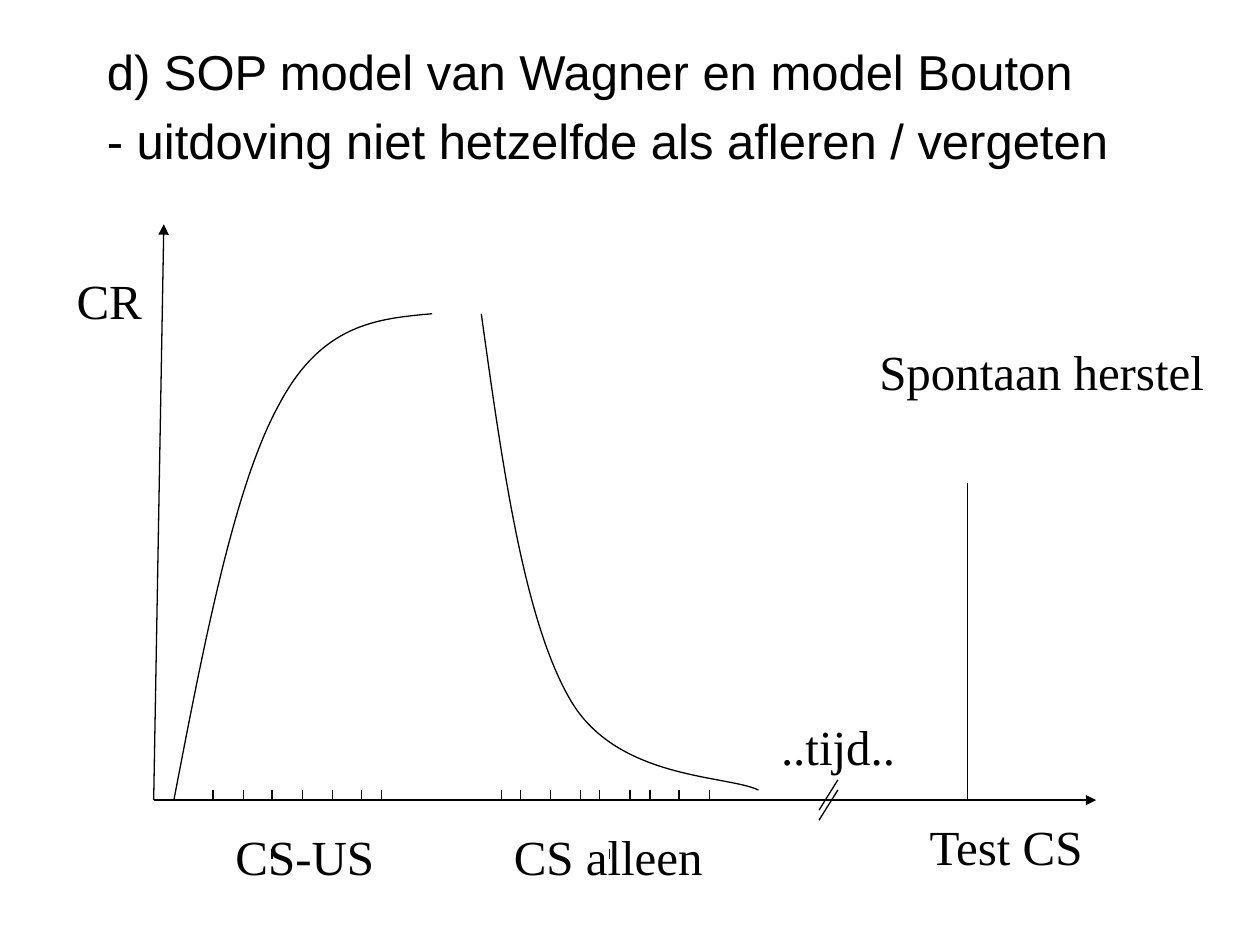
from lxml import etree
from pptx import Presentation
from pptx.dml.color import RGBColor
from pptx.enum.shapes import MSO_CONNECTOR as CONNECTOR
from pptx.oxml.ns import qn
from pptx.util import Inches, Pt

COLORS = {"ink": "000000", "background": "FFFFFF"}
INK = RGBColor.from_string(COLORS["ink"])
LINE_WIDTH = Pt(0.75)
TICK_HEIGHT = 0.08

HEADING = ["d) SOP model van Wagner en model Bouton",
           "- uitdoving niet hetzelfde als afleren / vergeten"]

# All plot coordinates are inches right of and above the origin of the axes.
ACQUISITION = [(0.16, 0), (0.4, 1.25), (0.64, 2.49), (0.99, 3.13),
               (1.33, 3.78), (1.77, 3.82), (2.21, 3.86)]
EXTINCTION = [(2.6, 3.86), (2.77, 2.64), (2.94, 1.42), (3.31, 0.79),
              (3.68, 0.16), (4.55, 0.2), (4.8, 0.08)]
TRIALS = [0.47, 0.71, 0.94, 1.18, 1.42, 1.65, 1.81,
          2.76, 2.91, 3.15, 3.39, 3.54, 3.78, 3.94, 4.17, 4.41]
TICKS = [(x, 0) for x in TRIALS] + [(0.94, -0.47), (3.62, -0.47)]
LABELS = [("CR", -0.71, 4.25, 0.72),
          ("CS-US", 0.55, -0.16, 1.31),
          ("CS alleen", 2.76, -0.16, 1.7),
          ("Test CS", 6.06, -0.08, 1.44),
          ("..tijd..", 4.88, 0.71, 1.11),
          ("Spontaan herstel", 5.66, 3.69, 2.78)]


def add_text(slide, lines, box, font_name, wrap):
    frame = slide.shapes.add_textbox(*map(Inches, box)).text_frame
    frame.word_wrap = wrap
    for index, line in enumerate(lines):
        paragraph = frame.paragraphs[0] if index == 0 else frame.add_paragraph()
        run = paragraph.add_run()
        run.text = line
        for name, value in {"name": font_name, "size": Pt(28)}.items():
            setattr(run.font, name, value)
        run.font.color.rgb = INK
    return frame


def ink_line(shape):
    shape.line.color.rgb = INK
    shape.line.width = LINE_WIDTH


def add_line(slide, start, end, arrow=False):
    line = slide.shapes.add_connector(
        CONNECTOR.STRAIGHT, *map(Inches, start + end))
    ink_line(line)
    properties = line._element.spPr
    if arrow:
        outline = properties.find(qn("a:ln"))
        etree.SubElement(outline, qn("a:tailEnd"), type="triangle")
    etree.SubElement(properties, qn("a:effectLst"))


def add_curve(slide, points):
    """Draw a Bezier path: a start, then two controls and an end per segment."""
    emu = [tuple(map(Inches, point)) for point in points]
    builder = slide.shapes.build_freeform(*emu[0])
    builder.add_line_segments(emu[1:], close=False)
    curve = builder.convert_to_shape()
    curve.fill.background()
    curve.shadow.inherit = False
    ink_line(curve)
    outline = next(curve._element.iter(qn("a:path")))
    corners = outline.findall(qn("a:lnTo"))
    for first in range(0, len(corners), 3):
        bezier = etree.SubElement(outline, qn("a:cubicBezTo"))
        for corner in corners[first:first + 3]:
            bezier.append(corner[0])
            outline.remove(corner)


def add_heading(slide, box):
    frame = add_text(slide, HEADING, box, "Arial", True)
    for paragraph in frame.paragraphs:
        indent = paragraph._p.get_or_add_pPr()
        indent.set("marL", str(Inches(0.38)))
        indent.set("indent", str(-Inches(0.38)))
    frame.paragraphs[1].space_before = Pt(5.6)


def add_conditioning_plot(slide, box):
    left, top, width, height = box

    def at(x, y):
        return left + x, top + height - y

    add_line(slide, at(0, 0), at(0.08, height), arrow=True)
    add_line(slide, at(0, 0), at(width, 0), arrow=True)
    for curve in (ACQUISITION, EXTINCTION):
        add_curve(slide, [at(*point) for point in curve])
    for base in (-0.08, -0.16):
        add_line(slide, at(5.28, base), at(5.43, base + 0.24))
    add_line(slide, at(6.46, 0), at(6.46, 2.52))
    for x, y in TICKS:
        add_line(slide, at(x, y), at(x, y + TICK_HEIGHT))
    for label, x, y, label_width in LABELS:
        add_text(slide, [label], at(x, y) + (label_width, 0.57),
                 "Times New Roman", False)


def main():
    deck = Presentation()
    deck.slide_width, deck.slide_height = Inches(10), Inches(7.5)
    slide = deck.slides.add_slide(deck.slide_layouts[6])
    slide.background.fill.solid()
    slide.background.fill.fore_color.rgb = RGBColor.from_string(
        COLORS["background"])
    add_heading(slide, (0.75, 0.28, 8.5, 6.38))
    add_conditioning_plot(slide, (1.22, 1.78, 7.48, 4.57))
    deck.save("out.pptx")


if __name__ == "__main__":
    main()
